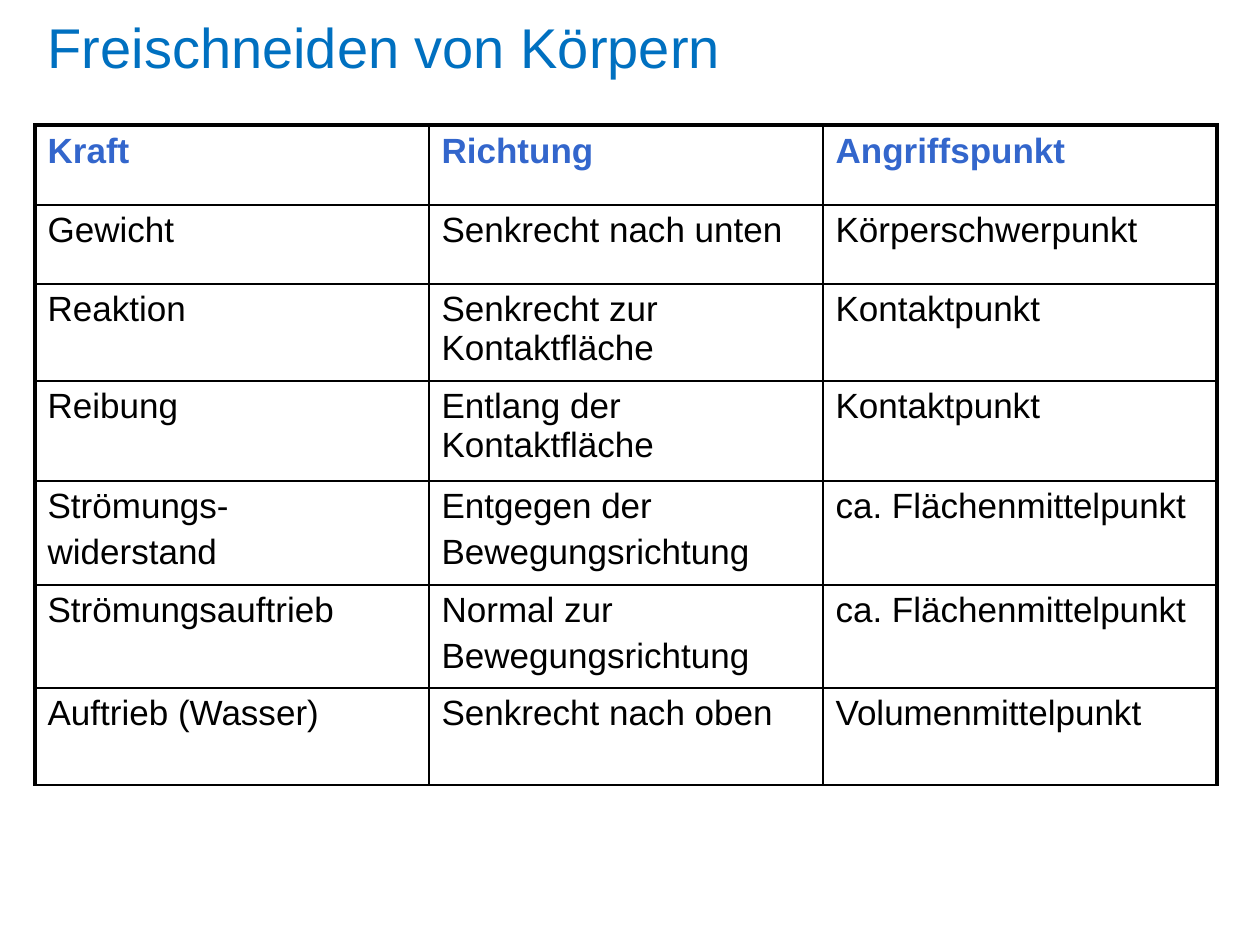
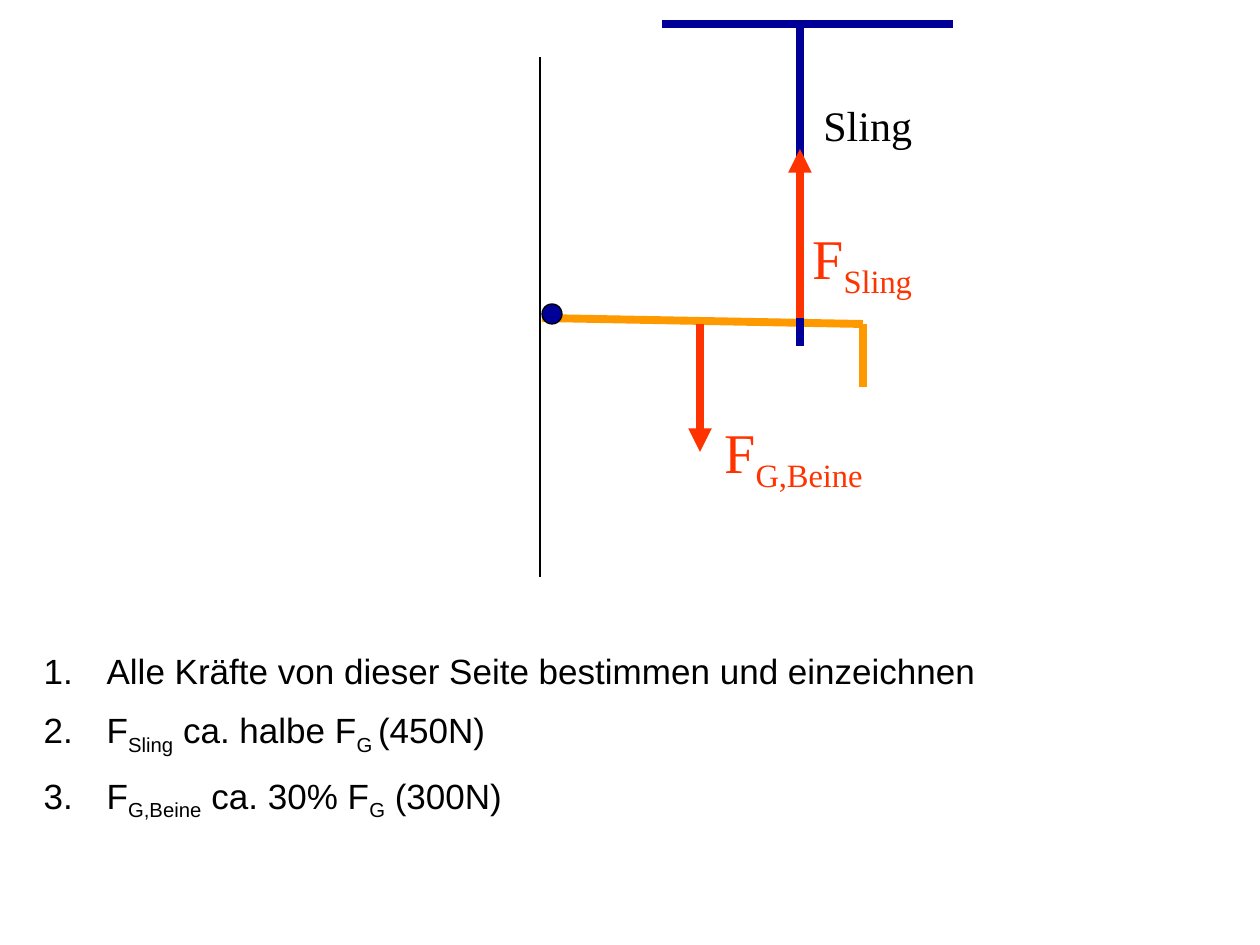
from lxml import etree
from pptx import Presentation
from pptx.dml.color import RGBColor
from pptx.enum.shapes import MSO_CONNECTOR, MSO_SHAPE
from pptx.enum.text import MSO_ANCHOR, MSO_AUTO_SIZE, PP_ALIGN
from pptx.oxml.ns import qn
from pptx.util import Emu, Pt

STRAIGHT, OVAL = MSO_CONNECTOR.STRAIGHT, MSO_SHAPE.OVAL
MIDDLE, TOP = MSO_ANCHOR.MIDDLE, MSO_ANCHOR.TOP
LEFT, NO_FIT = PP_ALIGN.LEFT, MSO_AUTO_SIZE.NONE

BLACK = RGBColor(0x00, 0x00, 0x00)
TITLE_BLUE = RGBColor(0x00, 0x70, 0xC0)
HEAD_BLUE = RGBColor(0x33, 0x66, 0xCC)
NAVY = RGBColor(0x00, 0x00, 0x99)
ORANGE = RGBColor(0xFF, 0x99, 0x00)
RED = RGBColor(0xFF, 0x33, 0x00)
SANS, SERIF = "Arial", "Times New Roman"
THIN, THICK, BAR = 0.75, 2.25, 4.5

TITLE = "Freischneiden von Körpern"
TITLE_BOX = (35, 0, 1071, 93)

FORCES = [
    ("Kraft", "Richtung", "Angriffspunkt"),
    ("Gewicht", "Senkrecht nach unten", "Körperschwerpunkt"),
    ("Reaktion", "Senkrecht zur Kontaktfläche", "Kontaktpunkt"),
    ("Reibung", "Entlang der Kontaktfläche", "Kontaktpunkt"),
    ("Strömungs-\nwiderstand", "Entgegen der\nBewegungsrichtung", "ca. Flächenmittelpunkt"),
    ("Strömungsauftrieb", "Normal zur\nBewegungsrichtung", "ca. Flächenmittelpunkt"),
    ("Auftrieb (Wasser)", "Senkrecht nach oben", "Volumenmittelpunkt"),
]
TABLE_LEFT, TABLE_TOP, COL_WIDTH = 35, 125, 394
ROW_HEIGHTS = [80, 79, 97, 100, 104, 103, 97]

STEPS = [
    ("Alle Kräfte von dieser Seite bestimmen und einzeichnen",),
    ("F", "Sling", " ca. halbe F", "G ", "(450N)"),
    ("F", "G,Beine", " ca. 30% F", "G", " (300N)"),
]
STEPS_BOX = (31, 643, 1197, 183)

HIP_X, KNEE_X, SLING_X, WEIGHT_X, WALL_X = 542, 863, 800, 700, 540
LEG_Y, KNEE_Y, BEAM_Y = 318, 324, 24
LEG = [
    ((HIP_X, LEG_Y), (KNEE_X, KNEE_Y), ORANGE, BAR, False),
    ((KNEE_X, KNEE_Y), (KNEE_X, 387), ORANGE, BAR, False),
]
HIP = (HIP_X, 304, 20, 20)
SLING_AND_FORCES = [
    ((SLING_X, BEAM_Y), (SLING_X, 346), NAVY, BAR, False),
    ((SLING_X, LEG_Y), (SLING_X, 149), RED, BAR, True),
    ((953, BEAM_Y), (662, BEAM_Y), NAVY, BAR, False),
    ((WEIGHT_X, KNEE_Y), (WEIGHT_X, 452), RED, BAR, True),
    ((WALL_X, 57), (WALL_X, 577), BLACK, THIN, False),
]
LABELS = [
    (("Sling",), (811, 93, 126, 63), 24, BLACK),
    (("F", "Sling"), (SLING_X, 217, 198, 79), 32, RED),
    (("F", "G,Beine"), (712, 411, 198, 79), 32, RED),
]


def px(n):
    return Emu(round(n * 914400 / 126))


def style(p, size, color, font=SANS, bold=False):
    p.alignment = LEFT
    for r in p.runs:
        f = r.font
        f.name, f.size, f.bold = font, Pt(size), bold
        f.color.rgb = color


def write_with_subscripts(p, parts):
    for i, part in enumerate(parts):
        r = p.add_run()
        r.text = part
        if i % 2:
            r._r.get_or_add_rPr().set("baseline", "-25000")


def place(sp, box):
    sp.left, sp.top, sp.width, sp.height = map(px, box)


def add_line(s, start, end, color, width, arrow):
    c = s.shapes.add_connector(STRAIGHT, *map(px, start + end))
    c.line.color.rgb = color
    c.line.width = Pt(width)
    if arrow:
        etree.SubElement(c.line._get_or_add_ln(), qn("a:tailEnd"), type="triangle")
    etree.SubElement(c._element.spPr, qn("a:effectLst"))


def add_border(cell, side, width):
    ln = etree.SubElement(cell._tc.get_or_add_tcPr(), qn(f"a:ln{side}"), w=str(Pt(width)))
    fill = etree.SubElement(ln, qn("a:solidFill"))
    etree.SubElement(fill, qn("a:srgbClr"), val=str(BLACK))


def add_force_table(s):
    rows, cols = len(FORCES), len(FORCES[0])
    box = (TABLE_LEFT, TABLE_TOP, cols * COL_WIDTH, sum(ROW_HEIGHTS))
    table = s.shapes.add_table(rows, cols, *map(px, box)).table
    for col in table.columns:
        col.width = px(COL_WIDTH)
    for i, texts in enumerate(FORCES):
        table.rows[i].height = px(ROW_HEIGHTS[i])
        for j, text in enumerate(texts):
            cell = table.cell(i, j)
            outer = {"L": j == 0, "R": j == cols - 1, "T": i == 0, "B": False}
            for side, thick in outer.items():
                add_border(cell, side, THICK if thick else 1)
            cell.fill.background()
            cell.text_frame.text = text
            for k, p in enumerate(cell.text_frame.paragraphs):
                p.space_before = Pt(4 if k else 0)
                style(p, 20, BLACK if i else HEAD_BLUE, bold=i == 0)


def add_label(s, parts, box, size, color):
    tf = s.shapes.add_textbox(*map(px, box)).text_frame
    tf.word_wrap = True
    p = tf.paragraphs[0]
    write_with_subscripts(p, parts)
    style(p, size, color, SERIF)


def fill_steps(sp):
    place(sp, STEPS_BOX)
    tf = sp.text_frame
    tf.auto_size, tf.vertical_anchor = NO_FIT, TOP
    for i, parts in enumerate(STEPS):
        p = tf.add_paragraph() if i else tf.paragraphs[0]
        pPr = p._p.get_or_add_pPr()
        pPr.set("marL", "457200")
        pPr.set("indent", "-457200")
        etree.SubElement(pPr, qn("a:buFont"), typeface="+mj-lt")
        etree.SubElement(pPr, qn("a:buAutoNum"), type="arabicPeriod")
        p.space_before = Pt(10 if i else 0)
        write_with_subscripts(p, parts)
        style(p, 20, BLACK)


def build_table_slide(prs):
    s = prs.slides.add_slide(prs.slide_layouts[5])
    sp = s.shapes.title
    place(sp, TITLE_BOX)
    tf = sp.text_frame
    tf.text = TITLE
    tf.auto_size, tf.vertical_anchor = NO_FIT, MIDDLE
    style(tf.paragraphs[0], 32, TITLE_BLUE)
    add_force_table(s)


def build_sling_slide(prs):
    s = prs.slides.add_slide(prs.slide_layouts[1])
    title = s.shapes.title._element
    title.getparent().remove(title)
    fill_steps(s.placeholders[1])
    for line in LEG:
        add_line(s, *line)
    hip = s.shapes.add_shape(OVAL, *map(px, HIP))
    hip.shadow.inherit = False
    hip.fill.solid()
    hip.fill.fore_color.rgb = NAVY
    hip.line.color.rgb = BLACK
    hip.line.width = Pt(THIN)
    for line in SLING_AND_FORCES:
        add_line(s, *line)
    for label in LABELS:
        add_label(s, *label)


def main():
    prs = Presentation()
    prs.slide_width, prs.slide_height = px(1260), px(945)
    build_table_slide(prs)
    build_sling_slide(prs)
    prs.save("out.pptx")


if __name__ == "__main__":
    main()
